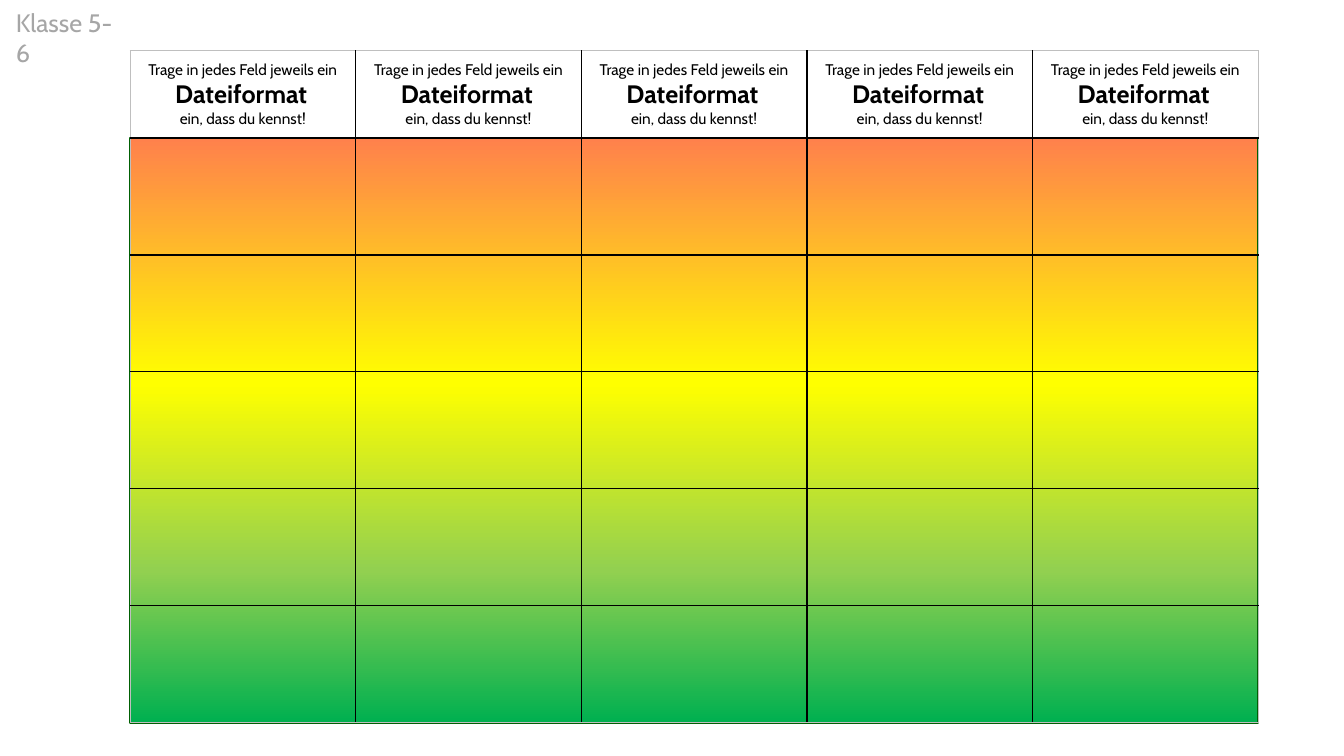
from lxml import etree
from pptx import Presentation
from pptx.dml.color import RGBColor
from pptx.enum.shapes import MSO_SHAPE
from pptx.enum.text import MSO_ANCHOR, PP_ALIGN
from pptx.oxml.ns import qn
from pptx.util import Inches, Pt

RECT = MSO_SHAPE.RECTANGLE
MIDDLE = MSO_ANCHOR.MIDDLE
CENTER = PP_ALIGN.CENTER

WHITE = RGBColor(0xFF, 0xFF, 0xFF)
BLACK = RGBColor(0, 0, 0)
BACKDROP = RGBColor(0xEF, 0xEF, 0xEF)
GREY = RGBColor(0xA6, 0xA6, 0xA6)
EDGE_GREY = RGBColor(0xBF, 0xBF, 0xBF)
DARK_GREEN = RGBColor(0x00, 0x60, 0x03)
FONT = "Cabin"

GRADE = "Klasse 5-6"
PROMPT = [
    [("Trage in jedes Feld jeweils ein ", 11, False), ("Dateiformat", 18, True), (" ", 11, False)],
    [("ein, dass du kennst!", 11, False)],
]
GRADIENT = [(0, "FF814C"), (42, "FFFF00"), (74, "92D050"), (100, "00B050")]

SLIDE_W, SLIDE_H = 13.33, 7.5
COLS, BODY_ROWS = 5, 5
LEFT, TOP, GRID_W = 1.29, 0.5, 11.19
HEADER_H, ROW_H = 0.87, 1.16
BODY_TOP = TOP + HEADER_H
BODY_H = BODY_ROWS * ROW_H


def add_panel(s, left, top, width, height, line_color):
    panel = s.shapes.add_shape(RECT, Inches(left), Inches(top), Inches(width), Inches(height))
    panel.shadow.inherit = False
    panel.line.color.rgb = line_color
    panel.line.width = Pt(1.5)
    return panel


def fill_gradient(shape, stops):
    """Fill the shape from top to bottom with (percent, hex colour) stops."""
    shape.fill.gradient()
    grad = shape._element.spPr.find(qn("a:gradFill"))
    for child in list(grad):
        grad.remove(child)
    stop_list = etree.SubElement(grad, qn("a:gsLst"))
    for percent, color in stops:
        stop = etree.SubElement(stop_list, qn("a:gs"), pos=str(percent * 1000))
        etree.SubElement(stop, qn("a:srgbClr"), val=color)
    etree.SubElement(grad, qn("a:lin"), ang=str(90 * 60000), scaled="0")


def set_borders(cell, row, col):
    """Draw black lines inside the grid and fine grey lines around it."""
    outer = {"lnL": col == 0, "lnR": col == COLS - 1, "lnT": row == 0, "lnB": row == BODY_ROWS}
    for side, is_outer in outer.items():
        width, color = (Pt(0.5), EDGE_GREY) if is_outer else (Pt(1), BLACK)
        ln = etree.SubElement(cell._tc.get_or_add_tcPr(), qn("a:" + side), w=str(width))
        fill = etree.SubElement(ln, qn("a:solidFill"))
        etree.SubElement(fill, qn("a:srgbClr"), val=str(color))


def write_prompt(cell):
    cell.vertical_anchor = MIDDLE
    tf = cell.text_frame
    for i, runs in enumerate(PROMPT):
        p = tf.paragraphs[0] if i == 0 else tf.add_paragraph()
        p.alignment = CENTER
        p.font.name = FONT
        p.font.color.rgb = BLACK
        for text, size, bold in runs:
            r = p.add_run()
            r.text = text
            r.font.size = Pt(size)
            r.font.bold = bold


def add_grid(s):
    frame = s.shapes.add_table(BODY_ROWS + 1, COLS, Inches(LEFT), Inches(TOP),
                               Inches(GRID_W), Inches(HEADER_H + BODY_H))
    table = frame.table
    table.first_row = False
    table.horz_banding = False
    for column in table.columns:
        column.width = Inches(GRID_W / COLS)
    for row, table_row in enumerate(table.rows):
        table_row.height = Inches(ROW_H if row else HEADER_H)
        for col, cell in enumerate(table_row.cells):
            set_borders(cell, row, col)
            cell.fill.background()
            if row == 0:
                write_prompt(cell)


def add_grade(s):
    box = s.shapes.add_textbox(Inches(0.06), Inches(0.02), Inches(1.23), Inches(0.4))
    tf = box.text_frame
    tf.word_wrap = True
    p = tf.paragraphs[0]
    p.text = GRADE
    p.font.name = FONT
    p.font.size = Pt(18)
    p.font.color.rgb = GREY


def main():
    prs = Presentation()
    prs.slide_width, prs.slide_height = Inches(SLIDE_W), Inches(SLIDE_H)
    s = prs.slides.add_slide(prs.slide_layouts[6])
    s.background.fill.solid()
    s.background.fill.fore_color.rgb = BACKDROP

    page = add_panel(s, 0, 0, SLIDE_W, SLIDE_H, WHITE)
    page.fill.solid()
    page.fill.fore_color.rgb = WHITE
    body = add_panel(s, LEFT, BODY_TOP, GRID_W, BODY_H, DARK_GREEN)
    fill_gradient(body, GRADIENT)
    add_grid(s)
    add_grade(s)
    prs.save("out.pptx")


if __name__ == "__main__":
    main()
